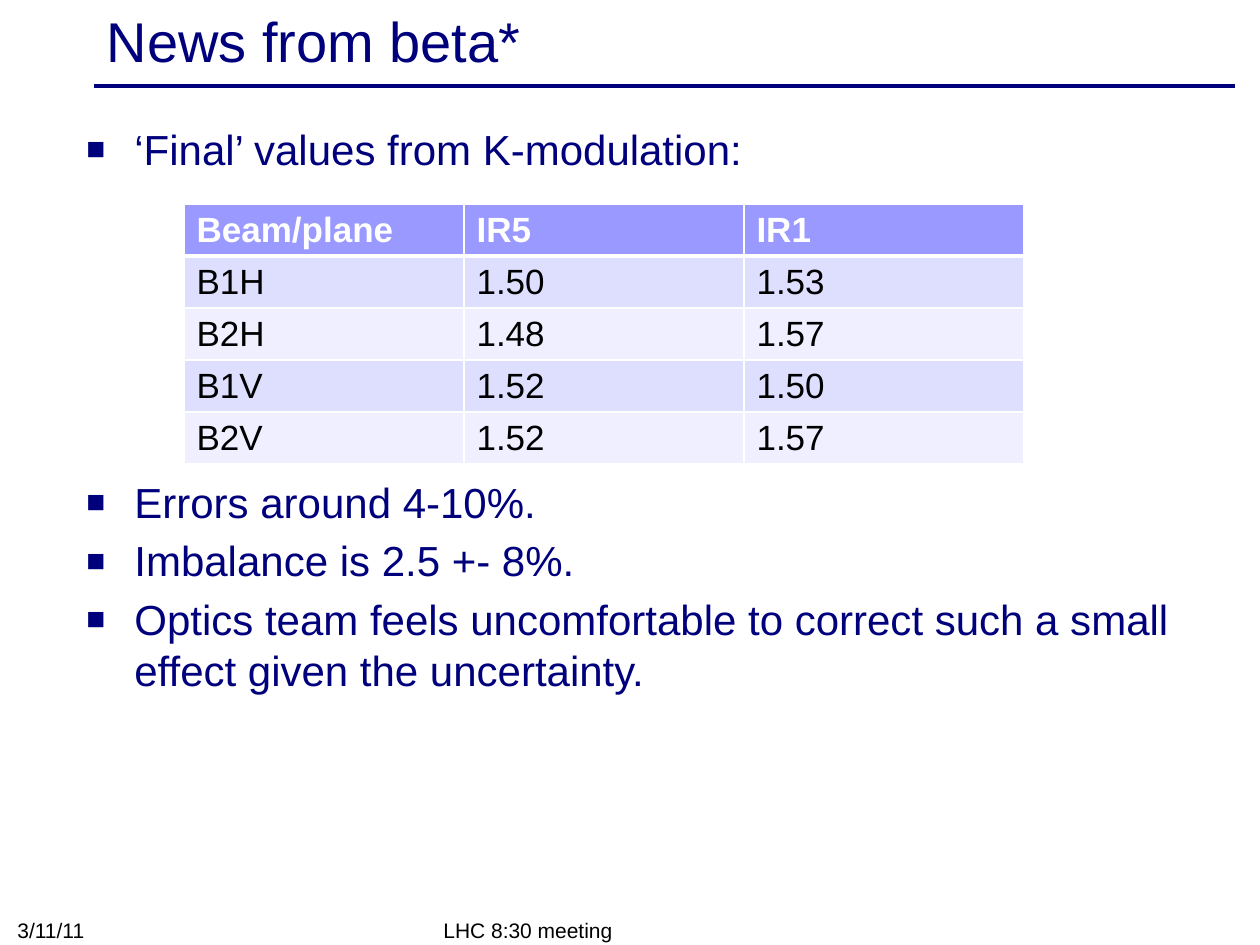
"""Build the slide with the beta* values from K-modulation."""
from lxml import etree
from pptx import Presentation
from pptx.dml.color import RGBColor
from pptx.enum.shapes import MSO_CONNECTOR
from pptx.enum.text import MSO_ANCHOR, PP_ALIGN
from pptx.oxml.ns import qn
from pptx.util import Emu, Pt

STRAIGHT = MSO_CONNECTOR.STRAIGHT
TOP, MIDDLE, BOTTOM = MSO_ANCHOR.TOP, MSO_ANCHOR.MIDDLE, MSO_ANCHOR.BOTTOM
LEFT = PP_ALIGN.LEFT

PX = 914400 // 126
SLIDE_SIZE = (1260, 945)
COLORS = {"navy": "00007D", "black": "000000", "white": "FFFFFF",
          "header": "9999FF", "odd": "DEDEFF", "even": "EFEFFF"}

TITLE = "News from beta*"
TITLE_BOX = (94, 4, 1134, 72)
RULE = (94, 86, 1235, 86)
BULLET_BOXES = [
    ((74, 117, 1134, 70), ["‘Final’ values from K-modulation:"]),
    ((74, 470, 1134, 240), [
        "Errors around 4-10%.",
        "Imbalance is 2.5 +- 8%.",
        "Optics team feels uncomfortable to correct such a small effect given the uncertainty.",
    ]),
]
FOOTERS = [
    ((5, 912, 294, 37), "3/11/11"),
    ((431, 912, 399, 37), "LHC 8:30 meeting"),
]
TABLE_BOX = (184, 204, 840, 258)
TABLE = [
    ("Beam/plane", "IR5", "IR1"),
    ("B1H", "1.50", "1.53"),
    ("B2H", "1.48", "1.57"),
    ("B1V", "1.52", "1.50"),
    ("B2V", "1.52", "1.57"),
]


def scale(box):
    return [Emu(value * PX) for value in box]


def rgb(name):
    return RGBColor.from_string(COLORS[name])


def set_values(target, values):
    for name, value in values.items():
        setattr(target, name, value)


def format_font(paragraph, size, color, bold=False):
    set_values(paragraph.font, {"name": "Arial", "size": Pt(size), "bold": bold})
    paragraph.font.color.rgb = rgb(color)


def add_bullet(paragraph):
    properties = paragraph._p.get_or_add_pPr()
    properties.set("marL", str(48 * PX))
    properties.set("indent", str(-48 * PX))
    color = etree.SubElement(properties, qn("a:buClr"))
    etree.SubElement(color, qn("a:srgbClr"), val=COLORS["navy"])
    etree.SubElement(properties, qn("a:buSzPct"), val="75000")
    etree.SubElement(properties, qn("a:buFont"), typeface="Arial")
    etree.SubElement(properties, qn("a:buChar"), char="■")


def add_text(slide, box, lines, size, color, anchor, bulleted=False):
    frame = slide.shapes.add_textbox(*scale(box)).text_frame
    set_values(frame, {"word_wrap": True, "vertical_anchor": anchor})
    frame.text = "\n".join(lines)
    for index, paragraph in enumerate(frame.paragraphs):
        if bulleted:
            add_bullet(paragraph)
            paragraph.line_spacing = Pt(1.2 * size)
        paragraph.space_before = Pt(0.2 * size if index else 0)
        format_font(paragraph, size, color)


def set_border(cell, side, width):
    line = etree.SubElement(cell._tc.get_or_add_tcPr(), qn("a:" + side), w=str(Pt(width)))
    fill = etree.SubElement(line, qn("a:solidFill"))
    etree.SubElement(fill, qn("a:srgbClr"), val=COLORS["white"])


def format_cell(cell, text, row_index):
    is_header = row_index == 0
    set_values(cell, {"text": text, "vertical_anchor": MIDDLE,
                      "margin_top": Emu(5 * PX), "margin_bottom": Emu(5 * PX)})
    for side in ("lnL", "lnR", "lnT", "lnB"):
        heavy = (is_header and side == "lnB") or (row_index == 1 and side == "lnT")
        set_border(cell, side, 3 if heavy else 1)
    cell.fill.solid()
    fill = "header" if is_header else "odd" if row_index % 2 else "even"
    cell.fill.fore_color.rgb = rgb(fill)
    paragraph = cell.text_frame.paragraphs[0]
    paragraph.alignment = LEFT
    format_font(paragraph, 20, "white" if is_header else "black", is_header)


def add_values_table(slide):
    frame = slide.shapes.add_table(len(TABLE), len(TABLE[0]), *scale(TABLE_BOX))
    for row_index, row in enumerate(TABLE):
        for column_index, text in enumerate(row):
            format_cell(frame.table.cell(row_index, column_index), text, row_index)


def add_title(slide):
    title = slide.shapes.title
    set_values(title, dict(zip(("left", "top", "width", "height"), scale(TITLE_BOX))))
    title.text = TITLE
    set_values(title.text_frame, {"vertical_anchor": MIDDLE, "word_wrap": True})
    paragraph = title.text_frame.paragraphs[0]
    paragraph.alignment = LEFT
    format_font(paragraph, 32, "navy")


def add_rule(slide):
    rule = slide.shapes.add_connector(STRAIGHT, *scale(RULE))
    rule.line.color.rgb = rgb("navy")
    rule.line.width = Pt(2)
    etree.SubElement(rule._element.spPr, qn("a:effectLst"))


def main():
    presentation = Presentation()
    width, height = scale(SLIDE_SIZE)
    set_values(presentation, {"slide_width": width, "slide_height": height})
    slide = presentation.slides.add_slide(presentation.slide_layouts[5])
    add_rule(slide)
    add_title(slide)
    for box, lines in BULLET_BOXES:
        add_text(slide, box, lines, 24, "navy", TOP, bulleted=True)
    for box, text in FOOTERS:
        add_text(slide, box, [text], 12, "black", BOTTOM)
    add_values_table(slide)
    presentation.save("out.pptx")


if __name__ == "__main__":
    main()
